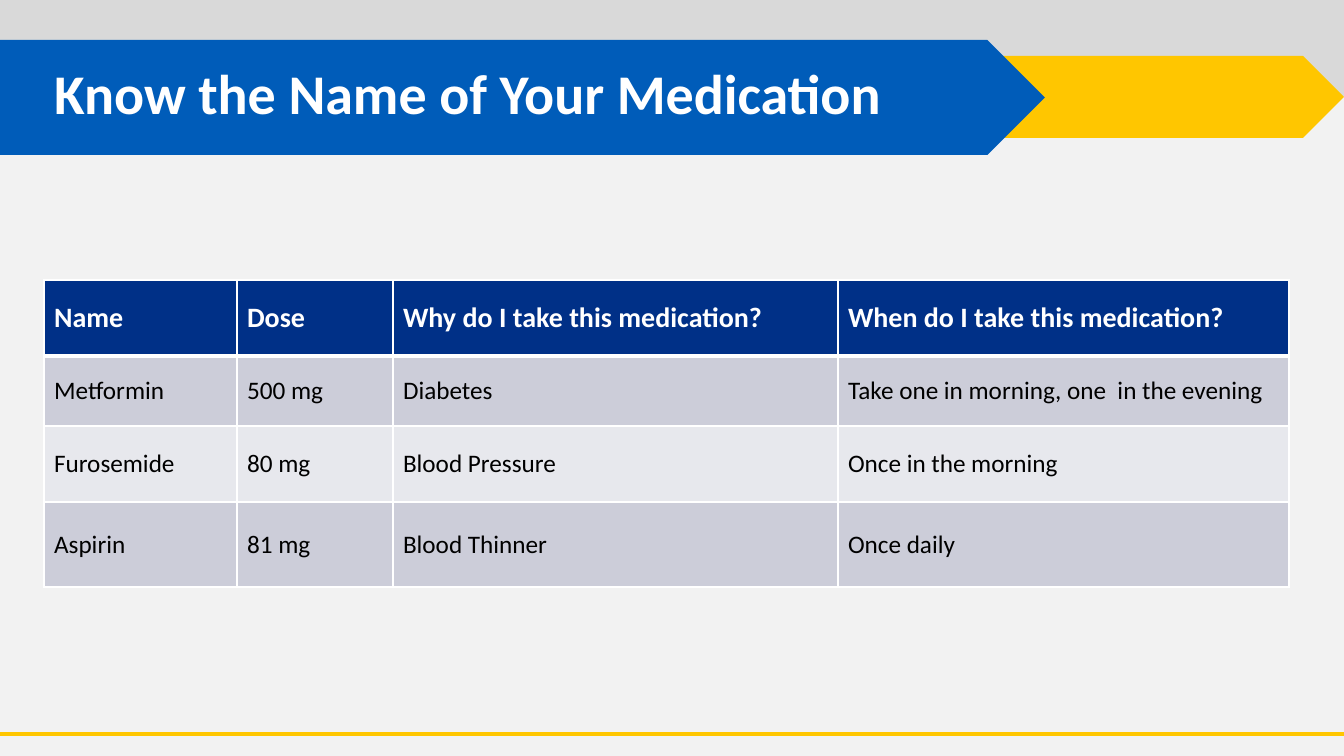
from lxml.etree import SubElement
from pptx import Presentation
from pptx.dml.color import RGBColor
from pptx.enum.shapes import MSO_CONNECTOR, MSO_SHAPE
from pptx.enum.text import MSO_ANCHOR, MSO_AUTO_SIZE, PP_ALIGN
from pptx.oxml.ns import qn
from pptx.util import Emu, Pt

W, H = 1344, 756
FONT = "Calibri"
COLORS = {
    "background": "F2F2F2", "gray": "D9D9D9", "yellow": "FFC600", "blue": "005CB9",
    "navy": "003087", "dark_band": "CCCDD9", "light_band": "E7E8ED",
    "white": "FFFFFF", "black": "000000",
}
COL_WIDTHS = [193, 156, 445, 451]
ROW_HEIGHTS = [76, 70, 76, 85]
MEDICATIONS = [
    ["Name", "Dose", "Why do I take this medication?", "When do I take this medication?"],
    ["Metformin", "500 mg", "Diabetes", "Take one in morning, one  in the evening"],
    ["Furosemide", "80 mg", "Blood Pressure", "Once in the morning"],
    ["Aspirin", "81 mg", "Blood Thinner", "Once daily"],
]


def px(n):
    return Emu(round(n * 914400 / 100.8))


def color(name):
    return RGBColor.from_string(COLORS[name])


def style_font(font, size, name, bold):
    font.name, font.size, font.bold = FONT, Pt(size), bold
    font.color.rgb = color(name)


def add_block(slide, kind, x, y, w, h, fill):
    sp = slide.shapes.add_shape(kind, px(x), px(y), px(w), px(h))
    sp.shadow.inherit = False
    sp.fill.solid()
    sp.fill.fore_color.rgb = color(fill)
    sp.line.fill.background()


def add_header(slide, x, y, w, text):
    add_block(slide, MSO_SHAPE.RECTANGLE, x, y, w, 99, "gray")
    add_block(slide, MSO_SHAPE.PENTAGON, x + w - 630, y + 59, 630, 82, "yellow")
    add_block(slide, MSO_SHAPE.PENTAGON, x, y + 43, 1045, 115, "blue")

    title = slide.shapes.title
    title.left, title.top, title.width, title.height = px(x + 44), px(y + 26), px(1208), px(146)
    slide.shapes._spTree.append(title._element)  # bring in front of the arrows
    tf = title.text_frame
    tf.text = text
    tf.word_wrap = True
    tf.auto_size = MSO_AUTO_SIZE.NONE
    tf.vertical_anchor = MSO_ANCHOR.MIDDLE
    p = tf.paragraphs[0]
    p.alignment = PP_ALIGN.LEFT
    p.line_spacing = 0.9
    style_font(p.runs[0].font, 40, "white", True)


def add_footer_line(slide, x, y, w):
    line = slide.shapes.add_connector(MSO_CONNECTOR.STRAIGHT, px(x), px(y), px(x + w), px(y))
    line.line.color.rgb = color("yellow")
    line.line.width = Pt(3)
    SubElement(line._element.spPr, qn("a:effectLst"))


def add_borders(cell, top, bottom):
    """Draw white cell borders; top and bottom are widths in points."""
    tcPr = cell._tc.get_or_add_tcPr()
    for side, width in (("L", 1), ("R", 1), ("T", top), ("B", bottom)):
        ln = SubElement(tcPr, qn(f"a:ln{side}"), w=str(Pt(width)))
        fill = SubElement(ln, qn("a:solidFill"))
        SubElement(fill, qn("a:srgbClr"), val=COLORS["white"])


def fill_cell(cell, text, row):
    header = row == 0
    add_borders(cell, top=3 if row == 1 else 1, bottom=3 if header else 1)
    cell.fill.solid()
    band = "dark_band" if row % 2 else "light_band"
    cell.fill.fore_color.rgb = color("navy" if header else band)
    cell.vertical_anchor = MSO_ANCHOR.MIDDLE
    cell.text_frame.text = text
    r = cell.text_frame.paragraphs[0].runs[0]
    style_font(r.font, 20 if header else 18, "white" if header else "black", header)


def add_medication_table(slide, x, y):
    table = slide.shapes.add_table(
        len(ROW_HEIGHTS), len(COL_WIDTHS), px(x), px(y),
        px(sum(COL_WIDTHS)), px(sum(ROW_HEIGHTS))).table
    for column, width in zip(table.columns, COL_WIDTHS):
        column.width = px(width)
    for i, (height, texts) in enumerate(zip(ROW_HEIGHTS, MEDICATIONS)):
        table.rows[i].height = px(height)
        for j, text in enumerate(texts):
            fill_cell(table.cell(i, j), text, i)


def main():
    prs = Presentation()
    prs.slide_width, prs.slide_height = px(W), px(H)
    slide = prs.slides.add_slide(prs.slide_layouts.get_by_name("Title Only"))
    slide.background.fill.solid()
    slide.background.fill.fore_color.rgb = color("background")
    add_header(slide, 0, -3, W, "Know the Name of Your Medication")
    add_footer_line(slide, 0, 734, W)
    add_medication_table(slide, 44, 280)
    prs.save("out.pptx")


if __name__ == "__main__":
    main()
